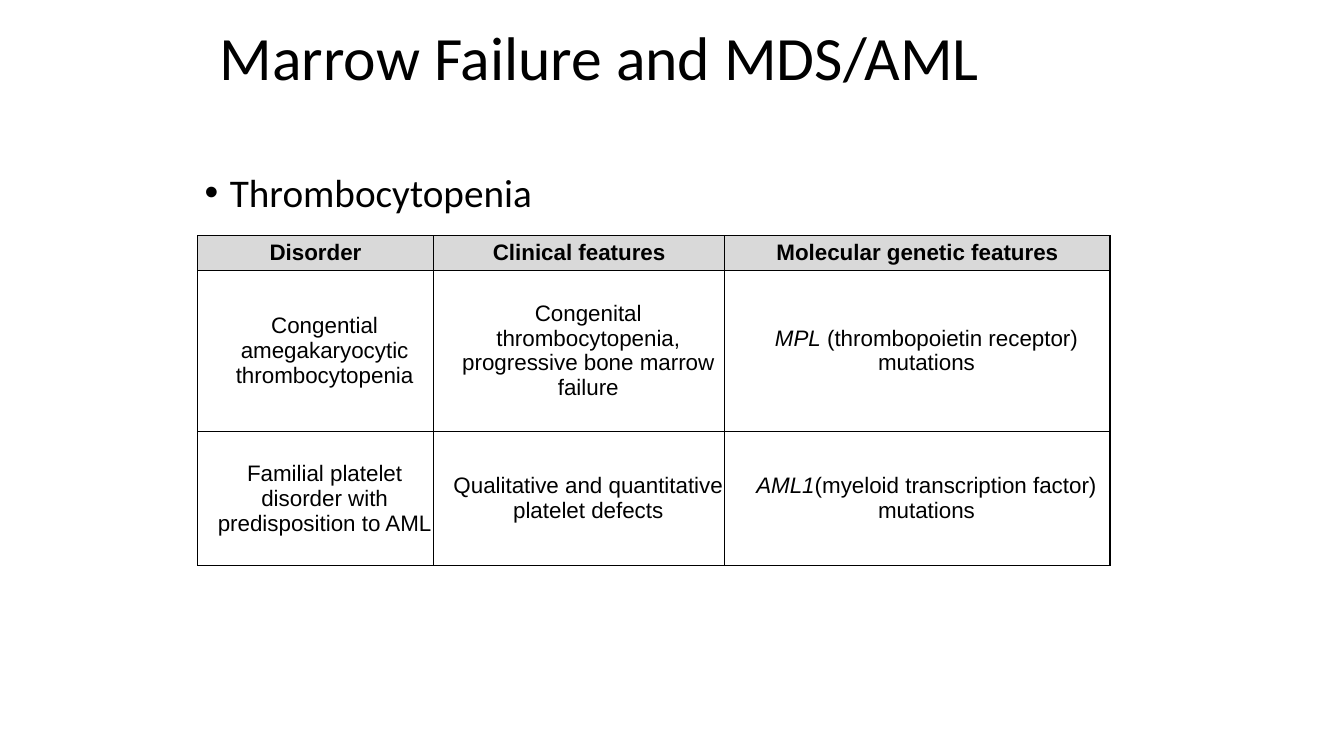
from lxml import etree
from pptx import Presentation
from pptx.dml.color import RGBColor
from pptx.enum.text import MSO_ANCHOR as Anchor, MSO_AUTO_SIZE as AutoSize, PP_ALIGN as Align
from pptx.oxml.ns import qn
from pptx.util import Inches, Pt

COLORS = {"text": "000000", "border": "000000", "header": "D9D9D9"}
SLIDE_W, SLIDE_H = 13.33, 7.5
COL_WIDTHS = [2.34, 2.89, 3.82]
ROW_HEIGHTS = [0.34, 1.6, 1.33]
CELL_INDENT = 0.18

# Each cell is a list of (text, italic) runs
HEADERS = ["Disorder", "Clinical features", "Molecular genetic features"]
DISORDERS = [
    [
        [("Congential amegakaryocytic thrombocytopenia", False)],
        [("Congenital thrombocytopenia, progressive bone marrow failure", False)],
        [("MPL", True), (" (thrombopoietin receptor) mutations", False)],
    ],
    [
        [("Familial platelet disorder with predisposition to AML", False)],
        [("Qualitative and quantitative platelet defects", False)],
        [("AML1", True), ("(myeloid transcription factor) mutations", False)],
    ],
]


def rgb(name):
    return RGBColor.from_string(COLORS[name])


def style_font(font, name, size, bold=False, italic=False):
    font.name, font.size = name, Pt(size)
    font.bold, font.italic = bold, italic
    font.color.rgb = rgb("text")


def set_indent(p, left, first=0):
    pPr = p._p.get_or_add_pPr()
    pPr.set("marL", str(Inches(left)))
    pPr.set("indent", str(Inches(first)))
    return pPr


def fill_placeholder(sp, box, text, size, anchor):
    """Place a placeholder and give it one left-aligned Calibri paragraph."""
    sp.left, sp.top, sp.width, sp.height = [Inches(v) for v in box]
    tf = sp.text_frame
    tf.text = text
    tf.word_wrap, tf.auto_size = True, AutoSize.NONE
    tf.vertical_anchor = anchor
    p = tf.paragraphs[0]
    p.alignment, p.line_spacing, p.space_before = Align.LEFT, 0.9, Pt(0)
    style_font(p.runs[0].font, "Calibri", size)
    return p


def add_bullet(p):
    pPr = set_indent(p, 0.25, -0.25)
    etree.SubElement(pPr, qn("a:buFont")).set("typeface", "Arial")
    etree.SubElement(pPr, qn("a:buChar")).set("char", "•")


def add_borders(cell):
    tcPr = cell._tc.get_or_add_tcPr()
    for side in ("lnL", "lnR", "lnT", "lnB"):
        ln = etree.SubElement(tcPr, qn(f"a:{side}"), w=str(Pt(1)))
        fill = etree.SubElement(ln, qn("a:solidFill"))
        etree.SubElement(fill, qn("a:srgbClr")).set("val", COLORS["border"])


def fill_cell(cell, runs, header):
    add_borders(cell)
    if header:
        cell.fill.solid()
        cell.fill.fore_color.rgb = rgb("header")
    else:
        cell.fill.background()
    cell.margin_left = cell.margin_right = cell.margin_top = cell.margin_bottom = 0
    cell.vertical_anchor = Anchor.MIDDLE
    p = cell.text_frame.paragraphs[0]
    p.alignment = Align.CENTER
    set_indent(p, 0 if header else CELL_INDENT)
    for text, italic in runs:
        r = p.add_run()
        r.text = text
        style_font(r.font, "Arial", 16, header, italic)


def add_disorder_table(slide, left, top):
    rows = [[[(text, False)] for text in HEADERS]] + DISORDERS
    frame = slide.shapes.add_table(
        len(rows), len(HEADERS), Inches(left), Inches(top),
        Inches(sum(COL_WIDTHS)), Inches(sum(ROW_HEIGHTS)))
    table = frame.table
    table.first_row = table.horz_banding = False
    for col, width in zip(table.columns, COL_WIDTHS):
        col.width = Inches(width)
    for row, height in zip(table.rows, ROW_HEIGHTS):
        row.height = Inches(height)
    for i, row in enumerate(rows):
        for j, runs in enumerate(row):
            fill_cell(table.cell(i, j), runs, header=i == 0)


def main():
    prs = Presentation()
    prs.slide_width, prs.slide_height = Inches(SLIDE_W), Inches(SLIDE_H)
    slide = prs.slides.add_slide(prs.slide_layouts[1])

    # Title and bullet
    fill_placeholder(slide.shapes.title, (2.08, 0.16, 9.22, 0.88),
                     "Marrow Failure and MDS/AML", 44, Anchor.MIDDLE)
    p = fill_placeholder(slide.placeholders[1], (1.93, 1.67, 9.33, 4.22),
                         "Thrombocytopenia", 28, Anchor.TOP)
    add_bullet(p)

    # Disorders
    add_disorder_table(slide, 1.96, 2.34)
    prs.save("out.pptx")


if __name__ == "__main__":
    main()
